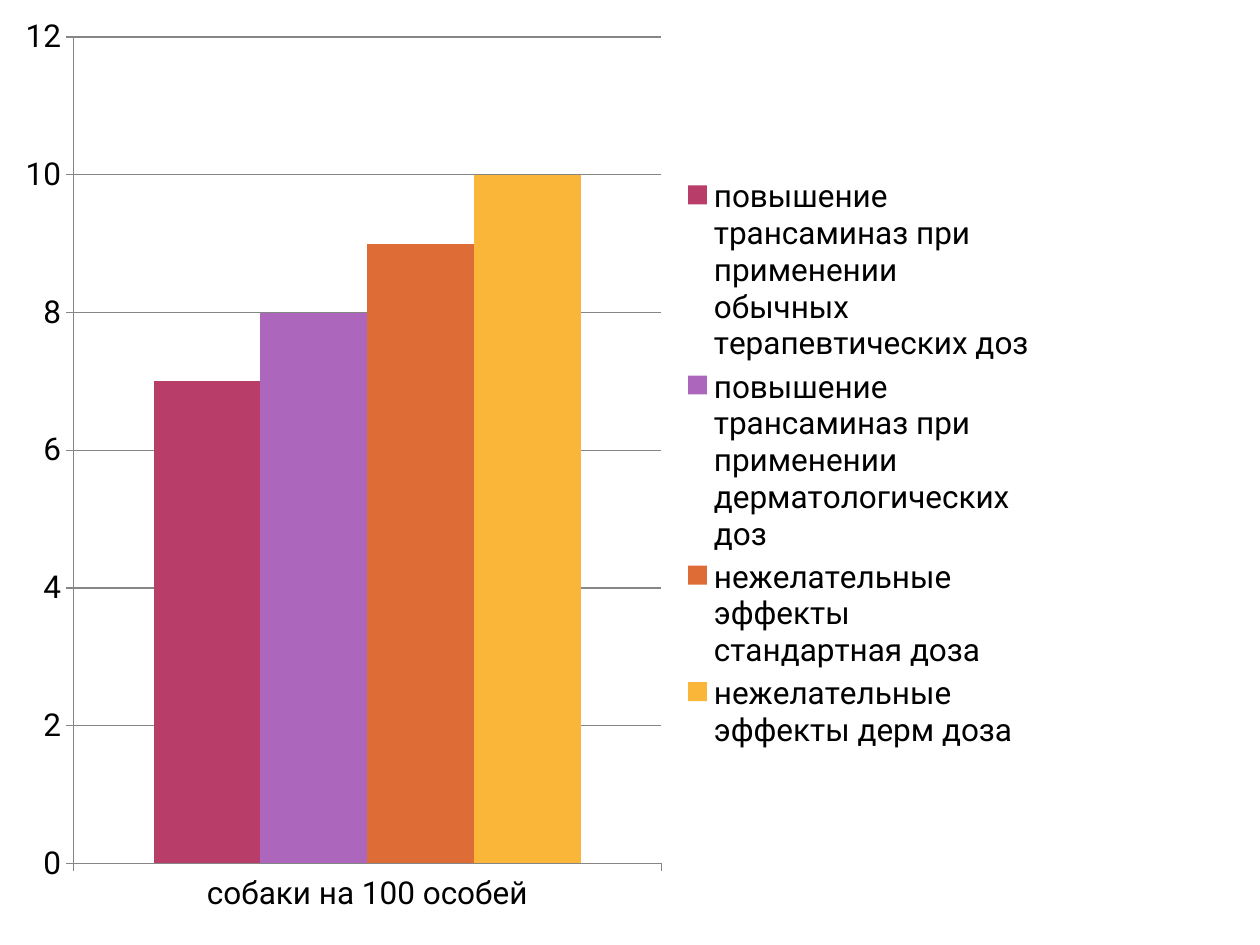
from lxml import etree
from pptx import Presentation
from pptx import util as u
from pptx.chart.data import CategoryChartData
from pptx.dml.color import RGBColor
from pptx.enum import chart as ch
from pptx.oxml.ns import qn

COLORS = {
    "text": "000000",
    "axis": "868686",
    "usual": "B83D68",
    "derma": "AC66BB",
    "effects_usual": "DE6C36",
    "effects_derma": "F9B639",
}
EFFECTS = [
    ("повышение трансаминаз при применении обычных терапевтических доз", 7, "usual"),
    ("повышение трансаминаз при применении дерматологических доз", 8, "derma"),
    ("нежелательные эффекты стандартная доза", 9, "effects_usual"),
    ("нежелательные эффекты дерм доза", 10, "effects_derma"),
]
PLOT_AREA = {"x": 0.07, "y": 0.04, "w": 0.56, "h": 0.89}


def rgb(name):
    return RGBColor.from_string(COLORS[name])


def style_line(line):
    line.color.rgb = rgb("axis")
    line.width = u.Pt(0.75)


def style_axis(axis):
    axis.major_tick_mark = ch.XL_TICK_MARK.OUTSIDE
    axis.minor_tick_mark = ch.XL_TICK_MARK.NONE
    style_line(axis.format.line)


def place_plot(chart):
    plot_area = chart.plots[0]._element.getparent()
    layout = plot_area.find(qn("c:layout"))
    if layout is None:
        layout = etree.Element(qn("c:layout"))
        plot_area.insert(0, layout)
    manual = etree.SubElement(layout, qn("c:manualLayout"))
    settings = [("layoutTarget", "inner"), ("xMode", "edge"), ("yMode", "edge")]
    for tag, value in settings + list(PLOT_AREA.items()):
        etree.SubElement(manual, qn(f"c:{tag}")).set("val", str(value))


def add_effects_chart(slide):
    effects = CategoryChartData()
    effects.categories = ["собаки на 100 особей"]
    for name, rate, _ in EFFECTS:
        effects.add_series(name, [rate])
    chart = slide.shapes.add_chart(
        ch.XL_CHART_TYPE.COLUMN_CLUSTERED, 0, 0,
        u.Inches(8.33), u.Inches(7.37), effects).chart

    chart.has_title = False
    chart.font.name = "Roboto"
    chart.font.size = u.Pt(18)
    chart.font.color.rgb = rgb("text")

    columns = chart.plots[0]
    columns.gap_width = 150
    columns.overlap = 0
    columns.vary_by_categories = False
    for series, (_, _, color) in zip(columns.series, EFFECTS):
        series.format.fill.solid()
        series.format.fill.fore_color.rgb = rgb(color)

    rates = chart.value_axis
    rates.minimum_scale, rates.maximum_scale, rates.major_unit = 0, 12, 2
    rates.has_major_gridlines = True
    style_line(rates.major_gridlines.format.line)
    for axis in (chart.category_axis, rates):
        style_axis(axis)

    chart.has_legend = True
    chart.legend.position = ch.XL_LEGEND_POSITION.RIGHT
    chart.legend.include_in_layout = False
    place_plot(chart)


def main():
    deck = Presentation()
    deck.slide_width, deck.slide_height = u.Inches(10), u.Inches(7.5)
    slide = deck.slides.add_slide(deck.slide_layouts[6])
    add_effects_chart(slide)
    deck.save("out.pptx")


if __name__ == "__main__":
    main()
